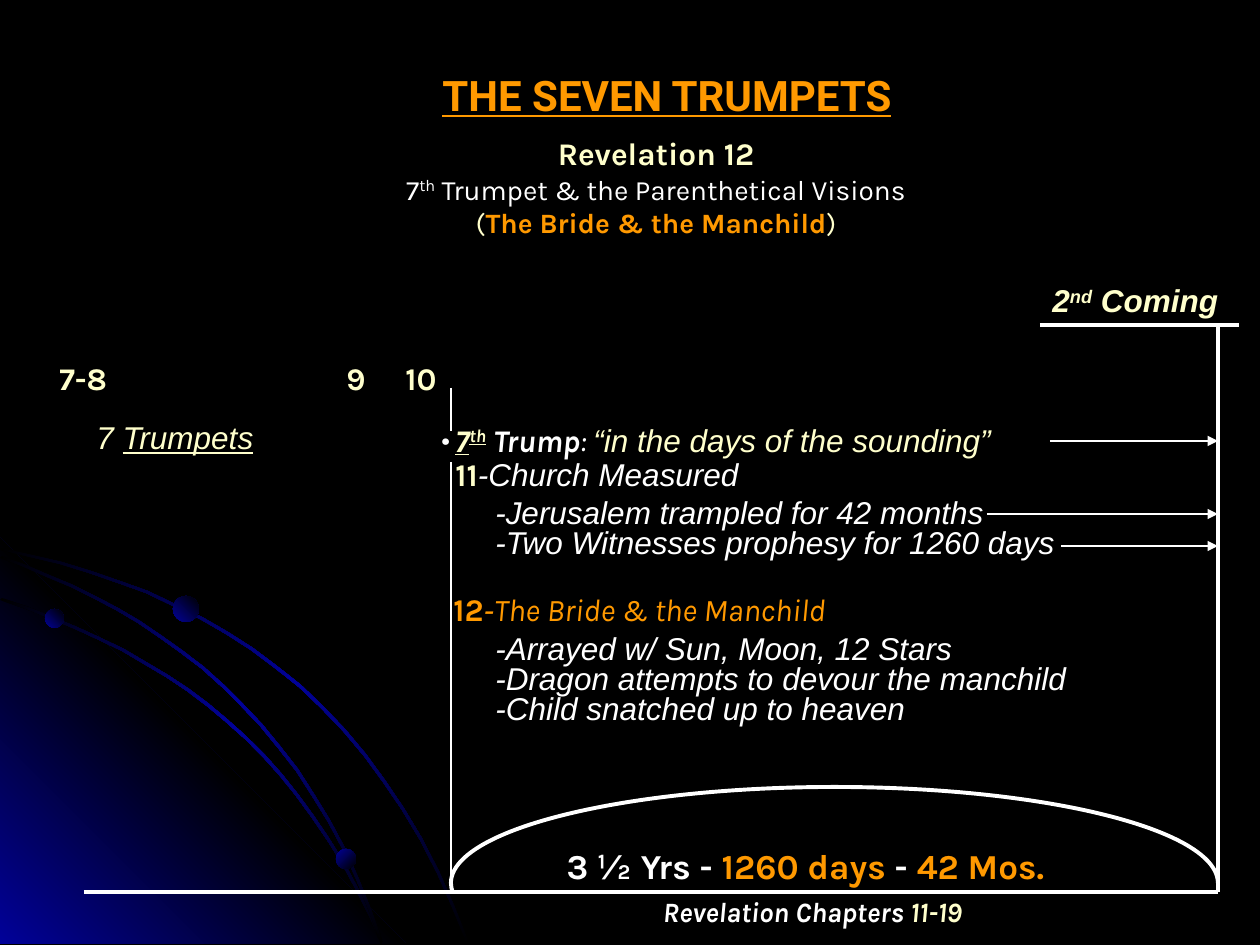
"""Build the Seven Trumpets timeline slide, with all lengths in px at 126 to the inch."""
from copy import deepcopy

from lxml.etree import SubElement
from pptx import Presentation
from pptx.dml.color import RGBColor
from pptx.enum.shapes import MSO_CONNECTOR, MSO_SHAPE
from pptx.enum.text import MSO_ANCHOR, PP_ALIGN
from pptx.oxml.ns import qn
from pptx.util import Inches, Pt

PX = 7257
BLACK = RGBColor(0x00, 0x00, 0x00)
BLUE = RGBColor(0x01, 0x01, 0x99)
WHITE = RGBColor(0xFF, 0xFF, 0xFF)
CREAM = RGBColor(0xFF, 0xFF, 0xCC)
ORANGE = RGBColor(0xFF, 0x99, 0x00)
ARIAL, KARLA, ROBOTO = "Arial", "Karla", "Roboto"
PLAIN, BOLD, ITALIC, UNDERLINE, RAISED = "", "b", "i", "u", "^"
BOLD_ITALIC = BOLD + ITALIC

TRUMP_X, COMING_X = 451, 1218
COMING_Y, GROUND_Y = 325, 892


def add_text(paras, x, y, w, h, size=18, center=False, spacing=1.0, wrap=True, bullet_indent=0):
    """Add a text box; each paragraph is a list of (words, font, colour, style) runs."""
    tf = s.shapes.add_textbox(x * PX, y * PX, w * PX, h * PX).text_frame
    tf.word_wrap = wrap
    tf.vertical_anchor = MSO_ANCHOR.MIDDLE if center else MSO_ANCHOR.TOP
    for i, runs in enumerate(paras):
        p = tf.add_paragraph() if i else tf.paragraphs[0]
        p.alignment = PP_ALIGN.CENTER if center else PP_ALIGN.LEFT
        p.line_spacing = spacing
        if bullet_indent:
            pPr = p._p.get_or_add_pPr()
            pPr.set("marL", str(bullet_indent * PX))
            if i == 0:
                pPr.set("indent", str(-bullet_indent * PX))
                SubElement(SubElement(pPr, qn("a:buClr")), qn("a:srgbClr"), val=str(WHITE))
                SubElement(pPr, qn("a:buFont"), typeface=KARLA)
                SubElement(pPr, qn("a:buChar"), char="•")
        for words, font, color, style in runs:
            r = p.add_run()
            r.text = words
            r.font.name = font
            r.font.size = Pt(size)
            r.font.color.rgb = color
            r.font.bold = BOLD in style
            r.font.italic = ITALIC in style
            r.font.underline = UNDERLINE in style
            if RAISED in style:
                r._r.get_or_add_rPr().set("baseline", "30000")


def paint_gradient(sp, colors, angle):
    """Fill a shape with evenly spaced colours, at an angle counted anticlockwise."""
    sp.shadow.inherit = False
    sp.line.fill.background()
    sp.fill.gradient()
    sp.fill.gradient_angle = angle
    gs_list = sp._element.spPr.find(qn("a:gradFill")).find(qn("a:gsLst"))
    while len(gs_list) < len(colors):
        gs_list.append(deepcopy(gs_list[0]))
    for i, (stop, color) in enumerate(zip(sp.fill.gradient_stops, colors)):
        stop.position = i / (len(colors) - 1)
        stop.color.rgb = color


prs = Presentation()
prs.slide_width, prs.slide_height = Inches(10), Inches(7.5)
s = prs.slides.add_slide(prs.slide_layouts[6])
s.background.fill.solid()
s.background.fill.fore_color.rgb = BLACK

fb = s.shapes.build_freeform(0, 538, scale=PX)
fb.add_line_segments([(406, 944), (0, 944)], close=True)
paint_gradient(fb.convert_to_shape(), (BLUE, BLACK, BLUE), 45)

STEPS, ORBIT_WIDTH = 20, 2
orbits = [
    ((0, 550), (204, 591), (374, 692), (467, 944)),
    ((0, 600), (175, 658), (301, 753), (381, 944)),
    ((0, 558), (159, 615), (306, 716), (381, 944)),
]
for start, bend_1, bend_2, end in orbits:
    inner = []
    for i in range(STEPS + 1):
        t = i / STEPS
        weights = (1 - t) ** 3, 3 * t * (1 - t) ** 2, 3 * t ** 2 * (1 - t), t ** 3
        inner.append([sum(k * v for k, v in zip(weights, axis))
                      for axis in zip(start, bend_1, bend_2, end)])
    outer = [(x + ORBIT_WIDTH, y - ORBIT_WIDTH) for x, y in reversed(inner)]
    fb = s.shapes.build_freeform(*inner[0], scale=PX)
    fb.add_line_segments(inner[1:] + outer, close=True)
    paint_gradient(fb.convert_to_shape(), (BLACK, BLUE, BLACK), 315)

for x, y, diameter, angle in [(45, 609, 19, 45), (336, 849, 20, 315), (173, 596, 26, 45)]:
    planet = s.shapes.add_shape(MSO_SHAPE.OVAL, x * PX, y * PX, diameter * PX, diameter * PX)
    paint_gradient(planet, (BLUE, BLACK), angle)

frame_lines = [
    (84, GROUND_Y, COMING_X, GROUND_Y, 2.25),
    (COMING_X, COMING_Y, COMING_X, GROUND_Y, 2.25),
    (1040, COMING_Y, 1239, COMING_Y, 2.25),
    (TRUMP_X, 388, TRUMP_X, 431, 1.5),
    (TRUMP_X, 462, TRUMP_X, GROUND_Y, 1.5),
]
arrows = [(x, y, COMING_X, y, 0.75) for x, y in [(1050, 441), (987, 514), (1061, 546)]]
for x1, y1, x2, y2, width in frame_lines + arrows:
    line = s.shapes.add_connector(MSO_CONNECTOR.STRAIGHT, x1 * PX, y1 * PX, x2 * PX, y2 * PX)
    line.line.color.rgb = WHITE
    line.line.width = Pt(width)
    if width == 0.75:
        SubElement(line.line._get_or_add_ln(), qn("a:tailEnd"), type="triangle")
    SubElement(line._element.spPr, qn("a:effectLst"))

arch = s.shapes.add_shape(MSO_SHAPE.ARC, TRUMP_X * PX, 787 * PX, (COMING_X - TRUMP_X) * PX, 192 * PX)
ARC_UNITS_PER_DEGREE = 0.6
arch.adjustments[0] = 178.5 * ARC_UNITS_PER_DEGREE
arch.adjustments[1] = 0
arch.shadow.inherit = False
arch.fill.background()
arch.line.color.rgb = WHITE
arch.line.width = Pt(2.25)

title = [("THE SEVEN TRUMPETS", ROBOTO, ORANGE, BOLD + UNDERLINE)]
add_text([title], 410, 65, 514, 60, size=24, center=True)

chapter = [("Revelation 12", KARLA, CREAM, BOLD)]
add_text([chapter], 294, 128, 724, 50, center=True)

subject = [
    ("7", KARLA, WHITE, PLAIN),
    ("th", KARLA, WHITE, RAISED),
    (" Trumpet & the Parenthetical Visions", KARLA, WHITE, PLAIN),
]
theme = [
    ("(", KARLA, CREAM, PLAIN),
    ("The Bride & the Manchild", KARLA, ORANGE, BOLD),
    (")", KARLA, CREAM, PLAIN),
]
add_text([subject, theme], 294, 161, 724, 90, size=16, center=True)

second_coming = [
    ("2", ARIAL, CREAM, BOLD_ITALIC),
    ("nd", ARIAL, CREAM, BOLD_ITALIC + RAISED),
    (" Coming", ARIAL, CREAM, BOLD_ITALIC),
]
add_text([second_coming], 1040, 275, 195, 50, wrap=False)

for number, x in [("7-8", 47), ("9", 334), ("10", 393)]:
    add_text([[(number, KARLA, CREAM, BOLD)]], x, 353, 90, 50)

trumpets = [("7 ", ARIAL, CREAM, ITALIC), ("Trumpets", ARIAL, CREAM, ITALIC + UNDERLINE)]
add_text([trumpets], 84, 412, 199, 50)

seventh_trump = [
    ("7", KARLA, CREAM, BOLD_ITALIC + UNDERLINE),
    ("th", KARLA, CREAM, BOLD_ITALIC + UNDERLINE + RAISED),
    (" Trump", KARLA, WHITE, BOLD_ITALIC),
    (": ", KARLA, WHITE, ITALIC),
    ("“in the days of the sounding”", ARIAL, CREAM, ITALIC),
]
measured = [("11", KARLA, CREAM, BOLD), ("-Church Measured", ARIAL, WHITE, ITALIC)]
add_text([seventh_trump, measured], 429, 419, 620, 79, spacing=0.9, bullet_indent=14)

bride = [
    ("12", KARLA, ORANGE, BOLD),
    ("-", ARIAL, ORANGE, ITALIC),
    ("The Bride & the Manchild", KARLA, ORANGE, ITALIC),
]
add_text([bride], 441, 588, 662, 50, spacing=0.9)

church_events = ["-Jerusalem trampled for 42 months", "-Two Witnesses prophesy for 1260 days"]
bride_events = ["-Arrayed w/ Sun, Moon, 12 Stars", "-Dragon attempts to devour the manchild",
                "-Child snatched up to heaven"]
for events, y, h in [(church_events, 494, 73), (bride_events, 630, 103)]:
    add_text([[(event, ARIAL, WHITE, ITALIC)] for event in events], 483, y, 746, h, spacing=0.8)

duration = [
    ("3 ½ Yrs - ", KARLA, WHITE, BOLD),
    ("1260 days", KARLA, ORANGE, BOLD),
    (" - ", KARLA, WHITE, BOLD),
    ("42 Mos.", KARLA, ORANGE, BOLD),
]
add_text([duration], 480, 838, 651, 54, size=20, center=True)

chapters = [("Revelation Chapters ", KARLA, WHITE, BOLD_ITALIC), ("11-19", KARLA, CREAM, BOLD_ITALIC)]
add_text([chapters], 597, 887, 431, 48, size=16, center=True)

prs.save("out.pptx")
